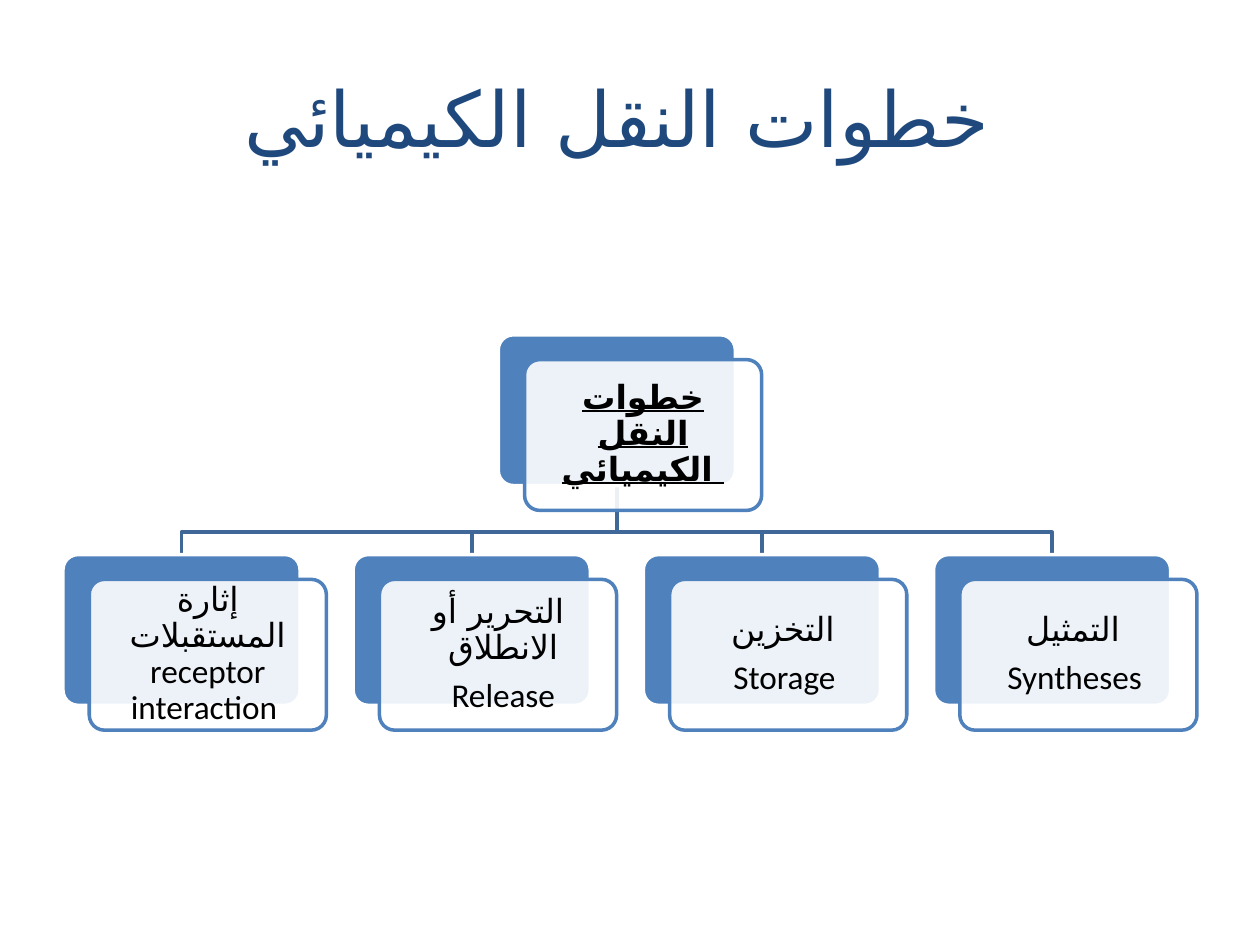
"""Build a slide with a four-branch hierarchy of chemical transmission steps."""
from lxml import etree
from pptx import Presentation
from pptx import util as u
from pptx.dml.color import RGBColor
from pptx.enum import shapes, text
from pptx.oxml.ns import qn

NAVY = RGBColor(0x1F, 0x49, 0x7D)
BLUE = RGBColor(0x4F, 0x81, 0xBD)
LINK = RGBColor(0x3F, 0x67, 0x97)
WHITE = RGBColor(0xFF, 0xFF, 0xFF)
BLACK = RGBColor(0, 0, 0)

FONT, ARABIC_FONT = "Calibri", "DejaVu Sans"
CARD_WIDTH, CARD_HEIGHT = 4.78, 3.04
SHIFT_X, SHIFT_Y = 0.53, 0.5
LEFT, PITCH = 1.27, 5.85
ROOT_TOP, BEND, CHILD_TOP = 6.75, 10.73, 11.18

ROOT = "خطوات النقل الكيميائي "
STEPS = [
    (["إثارة المستقبلات receptor interaction "], False),
    (["التحرير أو الانطلاق ", "Release "], True),
    (["التخزين ", "Storage "], False),
    (["التمثيل ", "Syntheses "], False),
]


def write(frame, lines, size, color, bold=None, underline=None, rtl=False,
          spacing=None, after=None):
    """Fill a text frame with centred paragraphs in one format."""
    frame.word_wrap = True
    frame.vertical_anchor = text.MSO_ANCHOR.MIDDLE
    for index, line in enumerate(lines):
        para = frame.add_paragraph() if index else frame.paragraphs[0]
        para.alignment = text.PP_ALIGN.CENTER
        para.line_spacing = spacing
        para.space_after = after
        if rtl:
            para._p.get_or_add_pPr().set("rtl", "1")
        span = para.add_run()
        span.text = line
        font = span.font
        font.name, font.size = FONT, u.Pt(size)
        font.bold, font.underline = bold, underline
        font.color.rgb = color
        script = etree.SubElement(span._r.get_or_add_rPr(), qn("a:cs"))
        script.set("typeface", ARABIC_FONT)


def add_box(page, left, top, fill, line):
    """Add one rounded rectangle of card size."""
    box = page.shapes.add_shape(
        shapes.MSO_SHAPE.ROUNDED_RECTANGLE,
        u.Cm(left), u.Cm(top), u.Cm(CARD_WIDTH), u.Cm(CARD_HEIGHT))
    box.adjustments[0] = 0.1
    box.shadow.inherit = False
    box.fill.solid()
    box.fill.fore_color.rgb = fill
    box.line.color.rgb = line
    box.line.width = u.Pt(2)
    return box


def add_card(page, left, top, lines, **style):
    """Add a blue back box and a translucent front box with text."""
    add_box(page, left, top, BLUE, WHITE)
    front = add_box(page, left + SHIFT_X, top + SHIFT_Y, WHITE, BLUE)
    color = front.fill._xPr.find(qn("a:solidFill"))[0]
    etree.SubElement(color, qn("a:alpha")).set("val", "90000")
    frame = front.text_frame
    frame.margin_left = frame.margin_right = u.Cm(0.2)
    frame.margin_top = frame.margin_bottom = u.Cm(0.2)
    write(frame, lines, 19, BLACK, spacing=0.9, after=u.Pt(6.65), **style)


def add_branch(page, start, end):
    """Add the bent line from the root card to one step card."""
    points = [(start, ROOT_TOP + CARD_HEIGHT), (start, BEND), (end, BEND), (end, CHILD_TOP)]
    corners = [(u.Cm(x), u.Cm(y)) for x, y in points]
    builder = page.shapes.build_freeform(*corners[0])
    builder.add_line_segments(corners[1:], close=False)
    branch = builder.convert_to_shape()
    branch.shadow.inherit = False
    branch.fill.background()
    branch.line.color.rgb = LINK
    branch.line.width = u.Pt(2)


def main():
    """Build and save the slide."""
    deck = Presentation()
    deck.slide_width, deck.slide_height = u.Cm(25.4), u.Cm(19.05)
    page = deck.slides.add_slide(deck.slide_layouts[5])

    title = page.shapes.title
    title.left, title.top = u.Cm(1.27), u.Cm(0.76)
    title.width, title.height = u.Cm(22.86), u.Cm(3.18)
    write(title.text_frame, [ROOT], 44, NAVY)

    lefts = [LEFT + PITCH * index for index in range(len(STEPS))]
    root_left = (lefts[0] + lefts[-1]) / 2
    middle = CARD_WIDTH / 2
    for left in reversed(lefts):
        add_branch(page, root_left + middle, left + middle)
    add_card(page, root_left, ROOT_TOP, [ROOT], bold=True, underline=True)
    for left, (lines, rtl) in zip(lefts, STEPS):
        add_card(page, left, CHILD_TOP, lines, rtl=rtl)

    deck.save("out.pptx")


if __name__ == "__main__":
    main()
